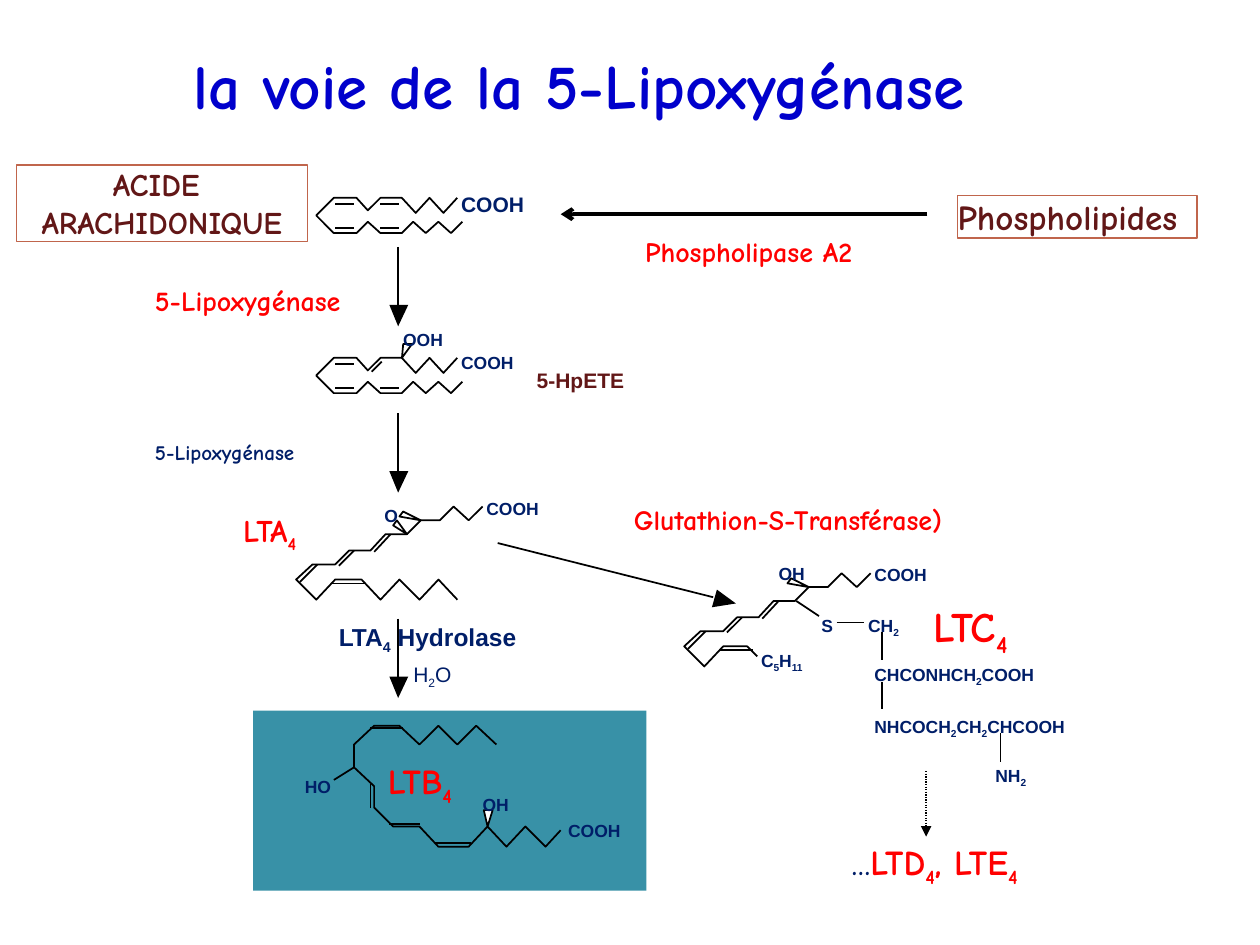
from lxml import etree
from pptx import Presentation
from pptx import util as u
from pptx.dml.color import RGBColor
from pptx.enum import dml, shapes, text
from pptx.oxml.ns import qn

COLORS = {
    "navy": "001E68", "red": "FF0000", "blue": "0000CC", "maroon": "621717",
    "rust": "C0654C", "teal": "3891A7", "black": "000000", "white": "FFFFFF",
}
COMIC, ARIAL = "Comic Neue", "Arial"


def rgb(name):
    return RGBColor.from_string(COLORS[name])


class Pathway:
    """Draws the molecules, arrows and labels of a pathway on one slide."""

    def __init__(self, slide):
        self.shapes = slide.shapes

    def line(self, x1, y1, x2, y2, width=1, head=None, dash=None):
        bond = self.shapes.add_connector(
            shapes.MSO_CONNECTOR.STRAIGHT, *map(u.Inches, (x1, y1, x2, y2)))
        bond.line.color.rgb = rgb("black")
        bond.line.width = u.Pt(width)
        if dash:
            bond.line.dash_style = dash
        if head:
            etree.SubElement(bond.line._get_or_add_ln(), qn("a:tailEnd"), type=head)
        etree.SubElement(bond._element.spPr, qn("a:effectLst"))

    def lines(self, ends, dx=0, dy=0):
        for x1, y1, x2, y2 in ends:
            self.line(x1 + dx, y1 + dy, x2 + dx, y2 + dy)

    def outline(self, points, dx=0, dy=0, fill=None, stroke=True, close=False):
        start, *rest = [(u.Inches(x + dx), u.Inches(y + dy)) for x, y in points]
        builder = self.shapes.build_freeform(*start)
        builder.add_line_segments(rest, close=close)
        self.paint(builder.convert_to_shape(), fill, "black" if stroke else None, 1)

    def wedge(self, points, dx=0, dy=0):
        self.outline(points, dx, dy, fill="white", close=True)

    def arrowhead(self, points):
        self.outline(points, fill="black", stroke=False, close=True)

    def paint(self, shape, fill, stroke, width):
        shape.shadow.inherit = False
        if fill:
            shape.fill.solid()
            shape.fill.fore_color.rgb = rgb(fill)
        else:
            shape.fill.background()
        if stroke:
            shape.line.color.rgb = rgb(stroke)
            shape.line.width = u.Pt(width)
        else:
            shape.line.fill.background()

    def box(self, x, y, w, h, fill=None, stroke=None):
        box = self.shapes.add_shape(
            shapes.MSO_SHAPE.RECTANGLE, *map(u.Inches, (x, y, w, h)))
        self.paint(box, fill, stroke, 0.75)
        return box

    def label(self, words, x, y, w, h, size=10, color="navy", font=ARIAL, bold=True,
              align=text.PP_ALIGN.LEFT, inset=False, wrap=False, frame=None):
        """Write words, with subscripts between tildes, and return the runs."""
        if frame is None:
            frame = self.shapes.add_textbox(*map(u.Inches, (x, y, w, h))).text_frame
        frame.word_wrap = wrap
        frame.auto_size = text.MSO_AUTO_SIZE.SHAPE_TO_FIT_TEXT
        frame.vertical_anchor = text.MSO_ANCHOR.TOP
        if not inset:
            frame.margin_left = frame.margin_right = 0
            frame.margin_top = frame.margin_bottom = 0
        runs = []
        for row, content in enumerate(words.split("\n")):
            paragraph = frame.add_paragraph() if row else frame.paragraphs[0]
            paragraph.alignment = align
            for i, part in enumerate(content.split("~")):
                if not part:
                    continue
                run = paragraph.add_run()
                run.text = part
                run.font.name, run.font.size, run.font.bold = font, u.Pt(size), bold
                run.font.color.rgb = rgb(color)
                if i % 2:
                    run._r.get_or_add_rPr().set("baseline", "-25000")
                runs.append(run)
        return runs

    def framed_label(self, words, x, y, w, h, **style):
        frame = self.box(x, y, w, h, stroke="rust").text_frame
        self.label(words, x, y, w, h, color="maroon", font=COMIC, frame=frame, **style)

    def reaction(self, top):
        neck = top + 0.46
        self.line(3.16, top, 3.16, neck)
        self.arrowhead([(3.09, neck), (3.16, neck + 0.17), (3.24, neck)])

    def arachidonic_chain(self, dy=0):
        top, low, mid = 1.57, 1.85, 1.76
        self.outline([
            (3.63, top), (3.52, 1.69), (3.41, top), (3.3, 1.69), (3.19, top), (3.02, top),
            (2.92, 1.67), (2.83, top), (2.65, top), (2.51, 1.71), (2.65, low), (2.83, low),
            (2.92, mid), (3.02, low), (3.19, low), (3.28, mid), (3.38, low), (3.48, mid),
            (3.58, low), (3.67, mid)], dy=dy)
        self.lines([(2.66, 1.62, 2.81, 1.62), (2.66, 1.81, 2.81, 1.81),
                    (3.02, 1.81, 3.17, 1.81)], dy=dy)

    def leukotriene(self, tail, dx=0, dy=0):
        self.outline([
            (3.83, 4.02), (3.72, 4.13), (3.6, 4.02), (3.49, 4.13), (3.34, 4.13),
            (3.23, 4.24), (3.06, 4.24), (2.94, 4.37), (2.77, 4.37), (2.66, 4.48),
            (2.48, 4.48), (2.35, 4.6), (2.51, 4.76), (2.66, 4.6), *tail], dx, dy)
        self.wedge([(3.34, 4.13), (3.2, 4.06), (3.17, 4.1)], dx, dy)
        self.lines([(2.52, 4.48, 2.38, 4.62), (2.81, 4.37, 2.69, 4.49),
                    (3.1, 4.24, 2.97, 4.38), (2.63, 4.63, 2.9, 4.63)], dx, dy)
        self.label("COOH", 3.86 + dx, 3.95 + dy, 0.45, 0.17)


def draw_arachidonic_acid(p):
    p.arachidonic_chain()
    p.line(3.02, 1.62, 3.17, 1.62)
    p.label("COOH", 3.66, 1.52, 0.51, 0.2, size=12)


def draw_hpete(p):
    p.arachidonic_chain(dy=1.27)
    p.line(3.03, 2.87, 2.95, 2.95)
    p.wedge([(3.19, 2.84), (3.27, 2.73), (3.2, 2.73)])
    p.label("COOH", 3.66, 2.79, 0.43, 0.17)
    p.label("OOH", 3.2, 2.61, 0.33, 0.17)


def draw_lta4(p):
    p.leukotriene([(2.87, 4.6), (3.02, 4.76), (3.17, 4.6), (3.33, 4.76),
                   (3.48, 4.6), (3.63, 4.76)])
    p.wedge([(3.23, 4.24), (3.15, 4.13), (3.12, 4.17)])
    p.label("O", 3.05, 4.01, 0.11, 0.17)


def draw_ltb4(p):
    p.outline([(3.94, 5.91), (3.78, 5.76), (3.63, 5.91), (3.48, 5.76), (3.33, 5.91),
               (3.17, 5.76), (2.97, 5.76), (2.81, 5.91), (2.81, 6.09)])
    p.outline([(2.81, 6.09), (2.97, 6.24), (2.97, 6.41), (3.12, 6.56), (3.33, 6.56),
               (3.48, 6.72), (3.72, 6.72), (3.87, 6.56), (4.02, 6.72), (4.17, 6.56),
               (4.33, 6.72), (4.45, 6.59)])
    p.lines([(3.2, 5.78, 2.94, 5.78), (2.94, 6.22, 2.94, 6.41), (3.09, 6.54, 3.33, 6.54),
             (3.45, 6.69, 3.74, 6.69), (2.81, 6.09, 2.65, 6.19)])
    p.wedge([(3.87, 6.56), (3.91, 6.43), (3.84, 6.43)])
    p.label("OH", 3.83, 6.3, 0.22, 0.17)
    p.label("COOH", 4.51, 6.51, 0.43, 0.17)
    p.label("HO", 2.42, 6.16, 0.22, 0.17)


def draw_ltc4(p):
    p.leukotriene([(2.85, 4.6), (2.93, 4.68)], dx=3.08, dy=0.53)
    p.lines([(6.32, 4.77, 6.5, 4.89), (6.64, 4.94, 6.86, 4.94), (7, 5.02, 7, 5.24),
             (7, 5.41, 7, 5.63), (7.94, 5.82, 7.94, 6.05)])
    for words, x, y, w in [
            ("OH", 6.18, 4.47, 0.22), ("C~5~H~11", 6.04, 5.16, 0.4), ("S", 6.52, 4.88, 0.1),
            ("CH~2", 6.89, 4.88, 0.32), ("CHCONHCH~2~COOH", 6.94, 5.27, 1.4),
            ("NHCOCH~2~CH~2~CHCOOH", 6.94, 5.68, 1.7), ("NH~2", 7.9, 6.07, 0.32)]:
        p.label(words, x, y, w, 0.17)


def draw_labels(p):
    for words, x, y, w, h, size, color in [
            ("LTA~4", 1.93, 4.06, 0.6, 0.3, 18, "red"),
            ("LTC~4", 7.41, 4.77, 0.77, 0.4, 24, "red"),
            ("5-Lipoxygénase", 1.23, 2.25, 1.69, 0.27, 16, "red"),
            ("5-Lipoxygénase", 1.23, 3.49, 1.26, 0.2, 12, "navy"),
            ("Phospholipase A2", 5.12, 1.86, 1.85, 0.27, 16, "red")]:
        p.label(words, x, y, w, h, size, color, COMIC)
    p.label("Glutathion-S-Transférase)", 4.76, 3.99, 2.99, 0.27, 16, "red", COMIC,
            align=text.PP_ALIGN.CENTER, wrap=True)
    p.label("LTB~4", 2.98, 5.98, 0.85, 0.43, 20, "red", COMIC, inset=True)
    p.label("la voie de la 5-Lipoxygénase", 1.44, 0.32, 7.2, 0.71, 36, "blue", COMIC,
            inset=True)
    p.label("5-HpETE", 4.26, 2.92, 0.7, 0.2, 12, "maroon")
    p.label("H~2~O", 3.28, 5.25, 0.31, 0.2, 12, bold=False)
    p.label("LTA~4~ Hydrolase", 2.59, 4.89, 1.69, 0.33, 14, inset=True)
    ellipsis = p.label("…~~LTD~4~, LTE~4", 6.76, 6.67, 1.69, 0.34, 20, "red", COMIC)[0]
    ellipsis.font.size = u.Pt(16)
    ellipsis.font.color.rgb = rgb("navy")
    p.framed_label("ACIDE \nARACHIDONIQUE", 0.13, 1.31, 2.31, 0.61, size=18,
                   align=text.PP_ALIGN.CENTER)
    p.framed_label("Phospholipides", 7.6, 1.55, 1.9, 0.34, size=20)


def main():
    deck = Presentation()
    deck.slide_width, deck.slide_height = u.Inches(10), u.Inches(7.5)
    p = Pathway(deck.slides.add_slide(deck.slide_layouts[6]))
    p.box(2.01, 5.64, 3.12, 1.43, fill="teal")
    for top in (1.96, 3.28, 4.91):
        p.reaction(top)
    p.line(3.95, 4.31, 5.66, 4.74)
    p.arrowhead([(5.65, 4.82), (5.84, 4.79), (5.69, 4.68)])
    p.line(7.36, 1.7, 4.45, 1.7, width=2.25, head="arrow")
    p.line(7.35, 6.12, 7.35, 6.64, 0.75, "triangle", dml.MSO_LINE.ROUND_DOT)
    for draw in (draw_arachidonic_acid, draw_hpete, draw_lta4, draw_ltb4, draw_ltc4,
                 draw_labels):
        draw(p)
    deck.save("out.pptx")


if __name__ == "__main__":
    main()
